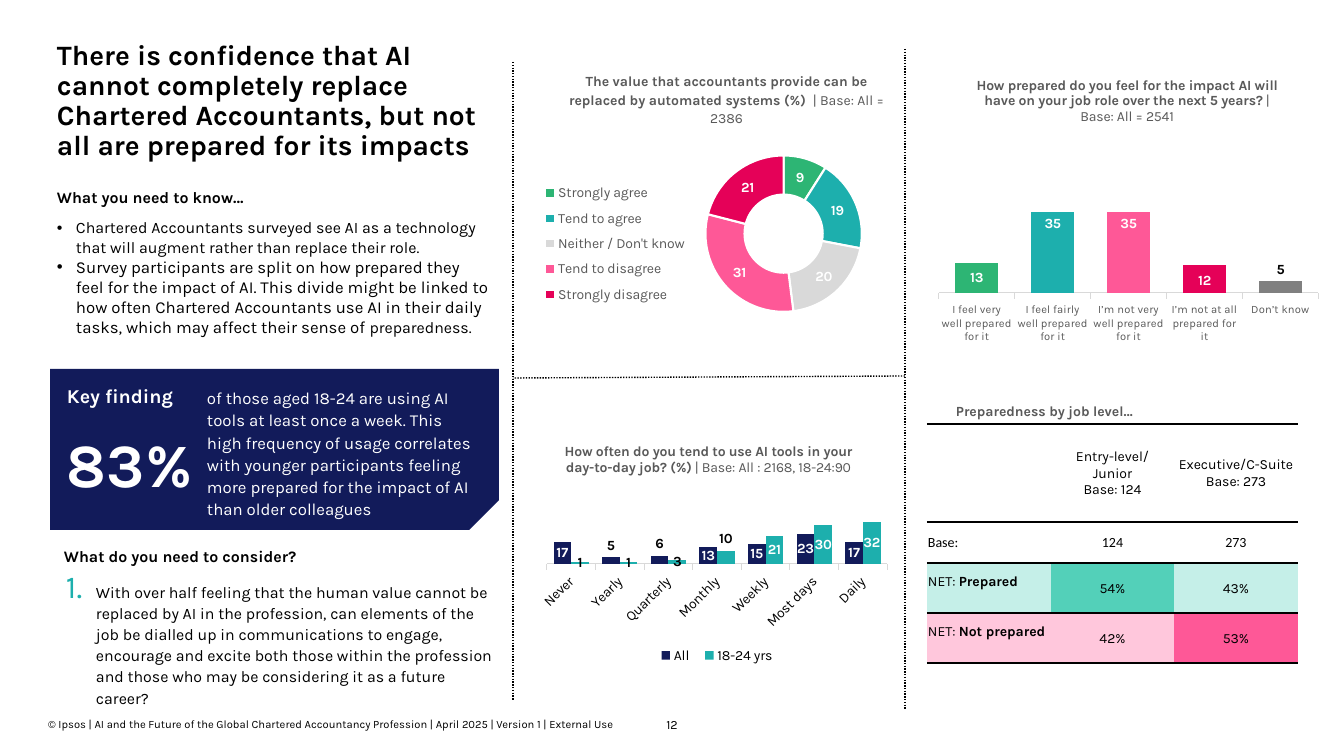
"""Build the slide on accountants' confidence and preparedness for AI."""
from lxml.etree import SubElement
from pptx import Presentation
from pptx.chart.data import CategoryChartData
from pptx.dml.color import RGBColor
from pptx.enum.chart import XL_CHART_TYPE, XL_LABEL_POSITION, XL_LEGEND_POSITION, XL_TICK_MARK
from pptx.enum.dml import MSO_LINE
from pptx.enum.shapes import MSO_CONNECTOR, MSO_SHAPE
from pptx.enum.text import MSO_ANCHOR, MSO_AUTO_SIZE, PP_ALIGN
from pptx.oxml import parse_xml
from pptx.oxml.ns import nsdecls, qn
from pptx.util import Pt

SCALE = 914400 / 100.8
FONT = "Karla"
BLACK, WHITE = RGBColor(0, 0, 0), RGBColor(255, 255, 255)
NAVY, TEAL = RGBColor(0x12, 0x1B, 0x5A), RGBColor(0x1D, 0xAF, 0xAD)
GREEN, PINK, RED = RGBColor(0x2D, 0xB5, 0x74), RGBColor(0xFE, 0x58, 0x97), RGBColor(0xE5, 0x01, 0x58)
TEXT_GREY, MID_GREY, PALE_GREY = RGBColor(0x59, 0x59, 0x59), RGBColor(0x80, 0x80, 0x80), RGBColor(0xD9, 0xD9, 0xD9)
MINT, PALE_MINT, PALE_PINK = RGBColor(0x53, 0xD0, 0xB9), RGBColor(0xC5, 0xEF, 0xE8), RGBColor(0xFF, 0xC7, 0xDC)
LEFT, CENTER = PP_ALIGN.LEFT, PP_ALIGN.CENTER
MIDDLE, TOP_INSIDE = XL_LABEL_POSITION.CENTER, XL_LABEL_POSITION.INSIDE_END
BASE_INSIDE, ABOVE = XL_LABEL_POSITION.INSIDE_BASE, XL_LABEL_POSITION.OUTSIDE_END

TITLE = [[("There is confidence that AI cannot completely replace Chartered Accountants, "
           "but not all are prepared for its impacts", True)]]
FINDINGS = [
    [("Chartered Accountants surveyed see AI as a technology that will augment rather than replace their role.", False)],
    [("Survey participants are split on how prepared they feel for the impact of AI. This divide might be linked to "
      "how often Chartered Accountants use AI in their daily tasks, which may affect their sense of ", False, 12),
     ("preparedness.", False)],
]
CONSIDER = [[("With over half feeling that the human value cannot be replaced by AI in the profession, can elements "
              "of the job be dialled up in communications to engage, encourage and excite both those within the "
              "profession and those who may be considering it as a future career?", False)]]

TEXTS = [
    ((48, 717, 597, 13), 8, BLACK, LEFT, 1, [[
        ("© Ipsos | AI and the Future of the Global Chartered Accountancy Profession | April 2025 | "
         "Version 1 | External Use", False)]]),
    ((645, 715, 54, 15), 9, BLACK, CENTER, 1.1, [[("12", False)]]),
    ((57, 186, 332, 20), 11.4, BLACK, LEFT, 1.1, [[("What you need to know…", True)]]),
    ((64, 545, 332, 20), 11.4, BLACK, LEFT, 1.1, [[("What do you need to consider?", True)]]),
    ((67, 382, 332, 23), 14, WHITE, LEFT, 1.1, [[("Key finding", True)]]),
    ((67, 419, 130, 72), 44, WHITE, LEFT, 1.1, [[("83%", True)]]),
    ((207, 386, 273, 132), 12, WHITE, LEFT, 1.1, [[
        ("of those aged 18-24 are using AI tools at least once a week. This high frequency of usage correlates "
         "with younger participants feeling more prepared for the impact of AI than older colleagues", False)]]),
    ((562, 71, 329, 35), 10, TEXT_GREY, CENTER, 1.1, [[
        ("The value that accountants provide can be replaced by automated systems (%)  ", True),
        ("| Base: All = 2386", False)]]),
    ((956, 400, 250, 18), 10, TEXT_GREY, LEFT, 1.15, [[("Preparedness by job level…", True)]]),
]
DIVIDERS = [(513, 62, 513, 700), (905, 49, 905, 709), (905, 376, 513, 378)]

VALUE_CHART = {
    "kind": XL_CHART_TYPE.DOUGHNUT, "place": (517, 109, 401, 290), "plot": (0.47, 0.16, 0.39, 0.54),
    "categories": ["Strongly agree", "Tend to agree", "Neither / Don't know", "Tend to disagree", "Strongly disagree"],
    "series": [("Series 1", [9, 19, 20, 31, 21], None, None, {})],
    "points": [GREEN, TEAL, PALE_GREY, PINK, RED],
    "legend": (XL_LEGEND_POSITION.RIGHT, TEXT_GREY, (0.06, 0.23, 0.37, 0.47)),
}
PREPARED_CHART = {
    "kind": XL_CHART_TYPE.COLUMN_CLUSTERED, "place": (931, 55, 388, 350), "plot": (0.02, 0.15, 0.98, 0.53),
    "categories": ["I feel very well prepared for it", "I feel fairly well prepared for it",
                   "I’m not very well prepared for it", "I’m not at all prepared for it", "Don’t know"],
    "series": [("Series 1", [13, 35, 35, 12, 5], NAVY, TOP_INSIDE,
                {0: (MIDDLE, WHITE), 3: (BASE_INSIDE, WHITE), 4: (ABOVE, BLACK)})],
    "points": [GREEN, TEAL, PINK, RED, MID_GREY],
    "title": [[("How prepared do you feel for the impact AI will have on your job role over the next 5 years?", True),
               (" | Base: All = 2541", False)]],
    "title_at": (0.11, 0.05), "maximum": 80, "axis": (8, TEXT_GREY, 0),
}
USAGE_CHART = {
    "kind": XL_CHART_TYPE.COLUMN_CLUSTERED, "place": (521, 422, 370, 278), "plot": (0.07, 0.23, 0.92, 0.28),
    "categories": ["Never", "Yearly", "Quarterly", "Monthly", "Weekly", "Most days", "Daily"],
    "series": [("All", [17, 5, 6, 13, 15, 23, 17], NAVY, MIDDLE, {1: (ABOVE, BLACK), 2: (ABOVE, BLACK)}),
               ("18-24 yrs", [1, 1, 3, 10, 21, 30, 32], TEAL, MIDDLE,
                {0: (MIDDLE, BLACK), 1: (MIDDLE, BLACK), 2: (MIDDLE, BLACK), 3: (ABOVE, BLACK)})],
    "points": [],
    "title": [[("How often do you tend to use AI tools in your day-to-day job? (%)", True),
               (" | Base: All : 2168, 18-24:90", False)]],
    "title_at": (0.11, 0.06), "maximum": 60, "axis": (10, BLACK, -45),
    "legend": (XL_LEGEND_POSITION.BOTTOM, BLACK, (0.35, 0.79, 0.36, 0.1)),
}

TABLE_PLACE, COLUMN_WIDTHS, ROW_HEIGHTS = (927, 424, 371, 239), [124, 123, 124], [98, 41, 50, 50]
ROW_RULES = [2, 1, 1, 2, 2]
ROW_FONTS = [FONT, "Calibri", FONT, FONT]
TABLE = [
    [([], WHITE), ([[("Entry-level/", False)], [("Junior", False)], [("Base: 124", False)]], WHITE),
     ([[("Executive/C-Suite", False)], [("Base: 273", False)]], WHITE)],
    [([[("Base:", False)]], WHITE), ([[("124", False)]], WHITE), ([[("273", False)]], WHITE)],
    [([[("NET: ", False), ("Prepared", True)]], PALE_MINT), ([[("54%", False)]], MINT), ([[("43%", False)]], PALE_MINT)],
    [([[("NET: ", False), ("Not prepared", True)]], PALE_PINK), ([[("42%", False)]], PALE_PINK), ([[("53%", False)]], PINK)],
]


def px(*lengths):
    return [round(length * SCALE) for length in lengths]


def style(font, size, colour, bold=False, name=FONT):
    font.name, font.size, font.bold = name, Pt(size), bold
    font.color.rgb = colour


def write(frame, paragraphs, size, colour, align=None, spacing=None, name=FONT):
    for index, runs in enumerate(paragraphs):
        para = frame.paragraphs[0] if index == 0 else frame.add_paragraph()
        para.alignment, para.line_spacing = align, spacing
        para.space_before = para.space_after = Pt(0)
        for text, bold, *own_size in runs:
            span = para.add_run()
            span.text = text
            style(span.font, own_size[0] if own_size else size, colour, bold, name)


def fill_box(box, place, *text):
    box.left, box.top, box.width, box.height = px(*place)
    frame = box.text_frame
    frame.word_wrap, frame.auto_size, frame.vertical_anchor = True, MSO_AUTO_SIZE.NONE, MSO_ANCHOR.TOP
    frame.margin_left = frame.margin_right = frame.margin_top = frame.margin_bottom = 0
    write(frame, *text)


def add_bullets(box, indent, *marks):
    for para in box.text_frame.paragraphs:
        properties = para._p.get_or_add_pPr()
        properties.set("marL", str(px(indent)[0]))
        properties.set("indent", str(-px(indent)[0]))
        for mark in marks:
            properties.append(parse_xml(mark.replace("/>", f" {nsdecls('a')}/>") if "><" not in mark else
                                        mark.replace(">", f" {nsdecls('a')}>", 1)))


def set_layout(parent, index, lengths, inner=False):
    for old in parent.findall(qn("c:layout")):
        parent.remove(old)
    layout = parse_xml(f"<c:layout {nsdecls('c')}><c:manualLayout/></c:layout>")
    settings = [("layoutTarget", "inner")] if inner else []
    settings += [("xMode", "edge"), ("yMode", "edge")] + list(zip("xywh", lengths))
    for tag, value in settings:
        SubElement(layout[0], qn(f"c:{tag}")).set("val", str(value))
    parent.insert(index, layout)


def add_survey_chart(page, content):
    data = CategoryChartData()
    data.categories = content["categories"]
    for name, values, *_ in content["series"]:
        data.add_series(name, values)
    chart = page.shapes.add_chart(content["kind"], *px(*content["place"]), data).chart
    style(chart.font, 10, BLACK)
    plot = chart.plots[0]
    plot.vary_by_categories = content["kind"] == XL_CHART_TYPE.DOUGHNUT
    for series, (_, _, colour, position, special) in zip(plot.series, content["series"]):
        labels = series.data_labels
        labels.show_value = True
        style(labels.font, 10, WHITE, True)
        if position is not None:
            labels.position = position
            series.format.fill.solid()
            series.format.fill.fore_color.rgb = colour
        for index, (place, label_colour) in special.items():
            label = series.points[index].data_label
            style(label.font, 10, label_colour, True)
            label.position = place
        for index, point_colour in enumerate(content["points"]):
            look = series.points[index].format
            look.fill.solid()
            look.fill.fore_color.rgb = point_colour
            if plot.vary_by_categories:
                look.line.color.rgb, look.line.width = WHITE, Pt(1.5)
    chart.has_title = "title" in content
    if chart.has_title:
        write(chart.chart_title.text_frame, content["title"], 10, TEXT_GREY)
        set_layout(chart.element.xpath("c:chart/c:title")[0], 1, content["title_at"])
        plot.gap_width, plot.overlap = 75, 0
        value_axis, axis = chart.value_axis, chart.category_axis
        value_axis.minimum_scale, value_axis.maximum_scale = 0, content["maximum"]
        value_axis.has_major_gridlines = value_axis.visible = False
        axis.major_tick_mark = XL_TICK_MARK.OUTSIDE
        axis.format.line.color.rgb, axis.format.line.width = PALE_GREY, Pt(0.75)
        size, colour, angle = content["axis"]
        style(axis.tick_labels.font, size, colour)
        chart.element.xpath(".//c:catAx/c:txPr/a:bodyPr")[0].set("rot", str(angle * 60000))
    else:
        chart.element.xpath(".//c:holeSize")[0].set("val", "59")
    chart.has_legend = "legend" in content
    if chart.has_legend:
        position, colour, place = content["legend"]
        chart.legend.position, chart.legend.include_in_layout = position, False
        style(chart.legend.font, 10, colour)
        set_layout(chart.element.xpath("c:chart/c:legend")[0], 1, place)
    set_layout(chart.element.xpath("c:chart/c:plotArea")[0], 0, content["plot"], True)


def set_borders(cell, above, below):
    properties = cell._tc.get_or_add_tcPr()
    for index, (side, width) in enumerate([("L", 0), ("R", 0), ("T", above), ("B", below)]):
        paint = f'<a:solidFill><a:srgbClr val="{BLACK}"/></a:solidFill>' if width else "<a:noFill/>"
        properties.insert(index, parse_xml(f'<a:ln{side} {nsdecls("a")} w="{Pt(width)}">{paint}</a:ln{side}>'))


def add_level_table(page):
    table = page.shapes.add_table(len(TABLE), len(TABLE[0]), *px(*TABLE_PLACE)).table
    table.first_row = table.horz_banding = False
    for column, width in zip(table.columns, px(*COLUMN_WIDTHS)):
        column.width = width
    for row, (height, cells) in enumerate(zip(px(*ROW_HEIGHTS), TABLE)):
        table.rows[row].height = height
        for column, (paragraphs, colour) in enumerate(cells):
            cell = table.cell(row, column)
            cell.vertical_anchor = MSO_ANCHOR.MIDDLE
            cell.margin_left, cell.margin_right, cell.margin_top, cell.margin_bottom = px(
                1, 1, 1, 14 if row > 1 and column == 0 else 0)
            cell.fill.solid()
            cell.fill.fore_color.rgb = colour
            write(cell.text_frame, paragraphs, 10, BLACK, CENTER if column else LEFT, name=ROW_FONTS[row])
            set_borders(cell, *ROW_RULES[row:row + 2])


def main():
    deck = Presentation()
    deck.slide_width, deck.slide_height = px(1344, 756)
    page = deck.slides.add_slide(deck.slide_layouts[3])
    title, findings, consider = page.placeholders
    fill_box(title, (57, 41, 436, 95), TITLE, 20, BLACK, LEFT, 0.9)
    fill_box(findings, (57, 218, 432, 139), FINDINGS, 11.4, BLACK, LEFT, 1)
    add_bullets(findings, 19, '<a:buFont typeface="Arial"/>', '<a:buChar char="•"/>')
    fill_box(consider, (66, 581, 433, 137), CONSIDER, 11.4, BLACK, LEFT, 1.1)
    add_bullets(consider, 30, f'<a:buClr><a:srgbClr val="{TEAL}"/></a:buClr>', '<a:buSzPct val="200000"/>',
                f'<a:buFont typeface="{FONT}"/>', '<a:buAutoNum type="arabicPeriod"/>')
    panel = page.shapes.add_shape(MSO_SHAPE.SNIP_1_RECTANGLE, *px(194, 225, 161, 449))
    panel.rotation, panel.adjustments[0], panel.shadow.inherit = 90, 0.185, False
    panel.fill.solid()
    panel.fill.fore_color.rgb = NAVY
    panel.line.fill.background()
    for place, size, colour, align, spacing, paragraphs in TEXTS:
        fill_box(page.shapes.add_textbox(0, 0, 0, 0), place, paragraphs, size, colour, align, spacing)
    for ends in DIVIDERS:
        divider = page.shapes.add_connector(MSO_CONNECTOR.STRAIGHT, *px(*ends))
        divider.line.color.rgb, divider.line.width, divider.line.dash_style = BLACK, Pt(1), MSO_LINE.ROUND_DOT
        SubElement(divider._element.spPr, qn("a:effectLst"))
    for content in (VALUE_CHART, PREPARED_CHART, USAGE_CHART):
        add_survey_chart(page, content)
    add_level_table(page)
    deck.save("out.pptx")


if __name__ == "__main__":
    main()
